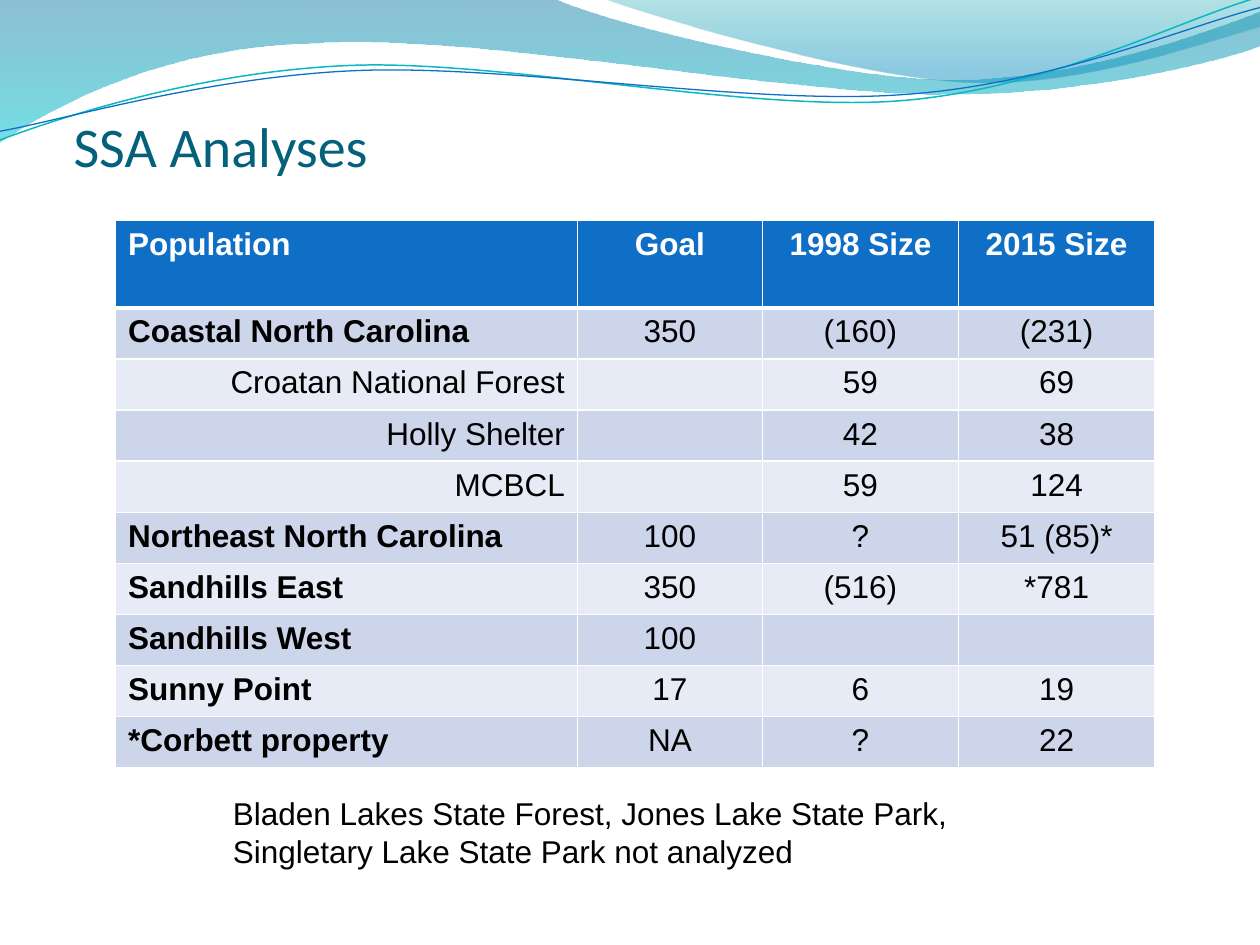
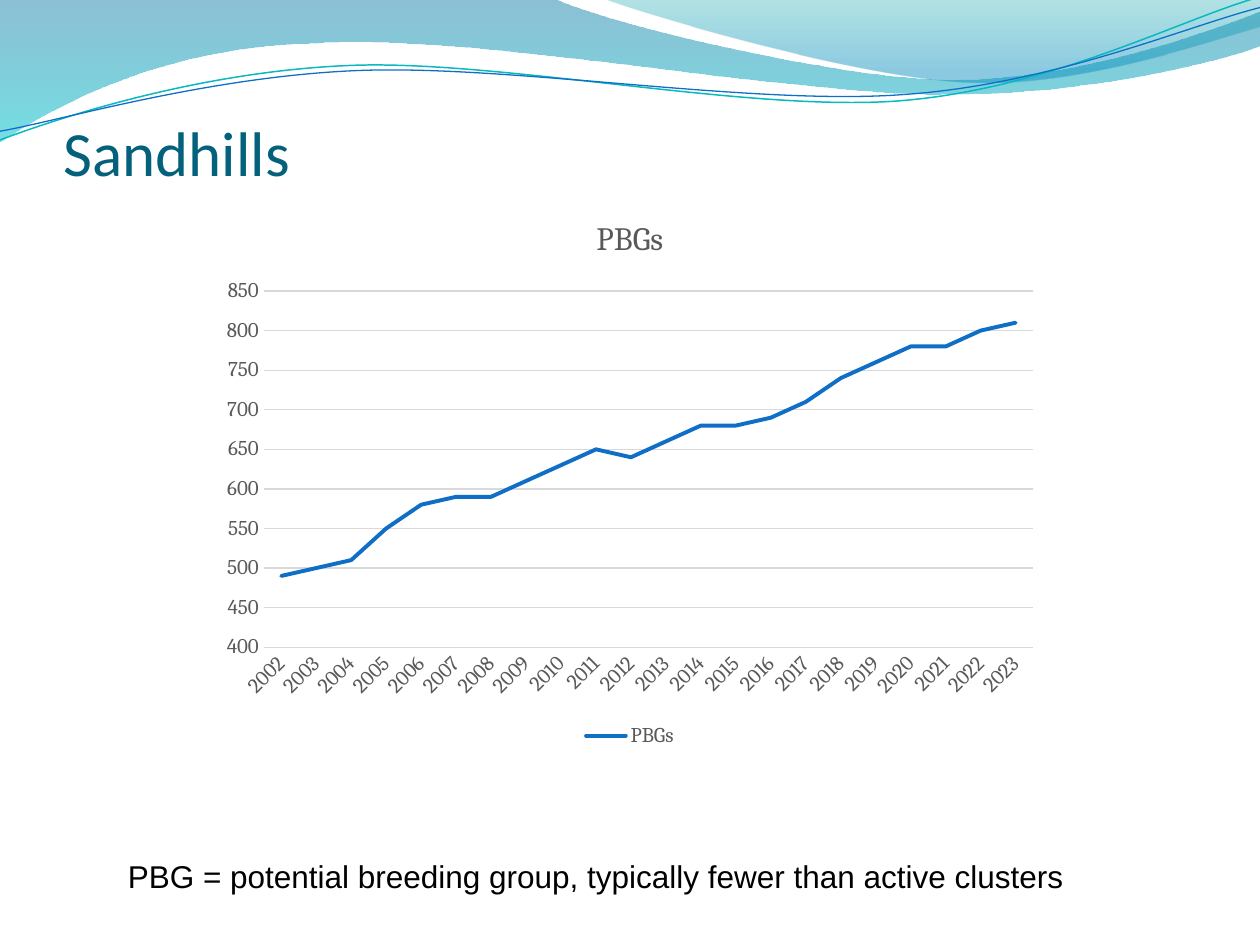
from dataclasses import dataclass
from typing import Optional

from lxml.etree import SubElement
from pptx import Presentation
from pptx.chart.data import CategoryChartData
from pptx.dml.color import RGBColor
from pptx.enum.chart import XL_CHART_TYPE as ChartType
from pptx.enum.chart import XL_LEGEND_POSITION as LegendPosition
from pptx.enum.chart import XL_TICK_MARK as TickMark
from pptx.enum.text import MSO_ANCHOR as Anchor
from pptx.enum.text import MSO_AUTO_SIZE as AutoSize
from pptx.enum.text import PP_ALIGN as Align
from pptx.oxml.ns import qn
from pptx.slide import Slide
from pptx.table import _Cell as Cell
from pptx.util import Pt

WHITE = RGBColor(0xFF, 0xFF, 0xFF)
BLACK = RGBColor(0x00, 0x00, 0x00)
BLUE = RGBColor(0x0F, 0x6F, 0xC6)
TEAL = RGBColor(0x0A, 0xB8, 0xBF)
TITLE_BLUE = RGBColor(0x04, 0x61, 0x7B)
DARK_ROW = RGBColor(0xCC, 0xD5, 0xEA)
LIGHT_ROW = RGBColor(0xE7, 0xEB, 0xF5)
CHART_TEXT = RGBColor(0x59, 0x59, 0x59)
GRID = RGBColor(0xD9, 0xD9, 0xD9)

TITLE_FONT, BODY_FONT, CHART_FONT = "Calibri", "Arial", "Cambria"
STRAND_TILT = 357.3

Point = tuple[float, float]


@dataclass(frozen=True)
class GradientStop:
    position: float
    color: RGBColor
    opacity: int


@dataclass(frozen=True)
class Wave:
    """A swoosh: segments of 1 point are straight, of 3 are Bézier curves."""
    start: Point
    segments: tuple[tuple[Point, ...], ...]
    stops: tuple[GradientStop, ...] = ()
    line_color: Optional[RGBColor] = None
    line_width: float = 0


@dataclass(frozen=True)
class Box:
    left: float
    top: float
    width: float
    height: float

    def lengths(self) -> tuple[Pt, Pt, Pt, Pt]:
        return Pt(self.left), Pt(self.top), Pt(self.width), Pt(self.height)


@dataclass(frozen=True)
class Population:
    name: str
    goal: str
    size_1998: str
    size_2015: str
    is_site: bool = False


WAVES = (
    Wave((0, 0),
         (((316.8, -0.7),),
          ((342.7, 12.2), (478.1, 45.4), (545.8, 45.4)),
          ((614.2, 45.4), (689.8, 18.7), (720, 6.5)),
          ((720.7, 25.9),),
          ((707.8, 31.7), (626.4, 54.7), (537.1, 54)),
          ((447.8, 54), (275, 20.2), (185, 24.5)),
          ((92.9, 25.9), (33.1, 59.8), (-0.7, 81.4)),
          ((0, 0),)),
         stops=(GradientStop(0, RGBColor(0x00, 0x74, 0xA1), 45),
                GradientStop(1, RGBColor(0x00, 0xC6, 0xCF), 55))),
    Wave((344.9, -0.7),
         (((366.5, 7.9), (491, 44.6), (553.7, 46.8)),
          ((616.3, 49.7), (691.9, 23), (720, 15.1)),
          ((720, 0),),
          ((344.9, -0.7),)),
         stops=(GradientStop(0, RGBColor(0x00, 0xA1, 0xA9), 30),
                GradientStop(0.8, RGBColor(0x00, 0x8B, 0xBF), 45))),
    Wave((-1.4, 63),
         (((33.8, 51.7), (114.1, 29.4), (199.8, 29.9)),
          ((284.9, 30.3), (425.8, 67.3), (512.4, 64.9)),
          ((599, 62.4), (676.4, 25.7), (720.2, 15.6))),
         line_color=TEAL, line_width=0.85),
    Wave((-1.1, 58),
         (((32.9, 53.8), (118.3, 32.5), (204.1, 33)),
          ((290.6, 33.4), (428.9, 63.8), (515.5, 61.4)),
          ((601.3, 59.6), (678.4, 30.1), (721.4, 21.3))),
         line_color=BLUE, line_width=0.75),
)

HEADINGS = ("Population", "Goal", "1998 Size", "2015 Size")
COLUMN_WIDTHS = (264, 105.7, 112.1, 112.1)
HEADER_HEIGHT, ROW_HEIGHT = 50, 29.2
POPULATIONS = (
    Population("Coastal North Carolina", "350", "(160)", "(231)"),
    Population("Croatan National Forest", "", "59", "69", is_site=True),
    Population("Holly Shelter", "", "42", "38", is_site=True),
    Population("MCBCL", "", "59", "124", is_site=True),
    Population("Northeast North Carolina", "100", "?", "51 (85)*"),
    Population("Sandhills East", "350", "(516)", "*781"),
    Population("Sandhills West", "100", "", ""),
    Population("Sunny Point", "17", "6", "19"),
    Population("*Corbett property", "NA", "?", "22"),
)

FIRST_YEAR = 2002
BREEDING_GROUPS = (490, 500, 510, 550, 580, 590, 590, 610, 630, 650, 640,
                   660, 680, 680, 690, 710, 740, 760, 780, 780, 800, 810)


def bend_segments(swoosh, wave: Wave) -> None:
    """Turn each run of three straight steps that stands for a curve into a Bézier."""
    steps = iter(swoosh.element.findall(f".//{qn('a:lnTo')}"))
    for segment in wave.segments:
        first, *others = [next(steps) for _ in segment]
        if others:
            first.tag = qn("a:cubicBezTo")
            for step in others:
                first.append(step[0])
                step.getparent().remove(step)


def draw_wave(slide: Slide, wave: Wave) -> None:
    points = [wave.start, *(point for segment in wave.segments for point in segment)]
    outline = [(Pt(x), Pt(y)) for x, y in points]
    builder = slide.shapes.build_freeform(*outline[0])
    builder.add_line_segments(outline[1:], close=bool(wave.stops))
    swoosh = builder.convert_to_shape()
    bend_segments(swoosh, wave)
    swoosh.shadow.inherit = False
    if not wave.stops:
        swoosh.rotation = STRAND_TILT
        swoosh.fill.background()
        swoosh.line.color.rgb = wave.line_color
        swoosh.line.width = Pt(wave.line_width)
        return
    swoosh.line.fill.background()
    swoosh.fill.gradient()
    swoosh.fill.gradient_angle = 270
    for target, stop in zip(swoosh.fill.gradient_stops, wave.stops):
        target.position = stop.position
        target.color.rgb = stop.color
    for color, stop in zip(swoosh.element.iter(qn("a:srgbClr")), wave.stops):
        SubElement(color, qn("a:alpha")).set("val", str(stop.opacity * 1000))


def style_font(font, name: str, size: float, color: RGBColor, bold: bool = False) -> None:
    font.name, font.size, font.bold = name, Pt(size), bold
    font.color.rgb = color


def add_title(slide: Slide, text: str, box: Box, size: float) -> None:
    frame = slide.shapes.add_textbox(*box.lengths()).text_frame
    frame.word_wrap = True
    frame.vertical_anchor = Anchor.BOTTOM
    frame.margin_left = frame.margin_right = frame.margin_bottom = 0
    frame.text = text
    style_font(frame.paragraphs[0].font, TITLE_FONT, size, TITLE_BLUE)


def add_note(slide: Slide, text: str, box: Box, wrap: bool = True) -> None:
    frame = slide.shapes.add_textbox(*box.lengths()).text_frame
    frame.word_wrap = wrap
    frame.auto_size = AutoSize.SHAPE_TO_FIT_TEXT
    frame.text = text
    for paragraph in frame.paragraphs:
        style_font(paragraph.font, BODY_FONT, 18, BLACK)


def set_borders(cell: Cell, top: float = 1, bottom: float = 1) -> None:
    """Add white borders; must run before the cell is filled."""
    properties = cell._tc.get_or_add_tcPr()
    for side, width in (("L", 1), ("R", 1), ("T", top), ("B", bottom)):
        border = SubElement(properties, qn(f"a:ln{side}"), w=str(Pt(width)))
        fill = SubElement(border, qn("a:solidFill"))
        SubElement(fill, qn("a:srgbClr"), val=str(WHITE))


def fill_cell(cell: Cell, text: str, fill: RGBColor, color: RGBColor,
              align: Align, bold: bool) -> None:
    cell.fill.solid()
    cell.fill.fore_color.rgb = fill
    cell.text = text
    paragraph = cell.text_frame.paragraphs[0]
    paragraph.alignment = align
    style_font(paragraph.font, BODY_FONT, 18, color, bold)


def add_population_table(slide: Slide, box: Box) -> None:
    table = slide.shapes.add_table(len(POPULATIONS) + 1, len(HEADINGS),
                                   *box.lengths()).table
    table.first_row = table.horz_banding = False
    for column, width in zip(table.columns, COLUMN_WIDTHS):
        column.width = Pt(width)
    for number, row in enumerate(table.rows):
        row.height = Pt(ROW_HEIGHT if number else HEADER_HEIGHT)

    for column, heading in enumerate(HEADINGS):
        cell = table.cell(0, column)
        set_borders(cell, bottom=3)
        fill_cell(cell, heading, BLUE, WHITE, Align.CENTER if column else Align.LEFT, True)

    for row, population in enumerate(POPULATIONS, start=1):
        values = (population.name, population.goal,
                  population.size_1998, population.size_2015)
        name_align = Align.RIGHT if population.is_site else Align.LEFT
        for column, value in enumerate(values):
            cell = table.cell(row, column)
            set_borders(cell, top=3 if row == 1 else 1)
            fill_cell(cell, value, DARK_ROW if row % 2 else LIGHT_ROW, BLACK,
                      Align.CENTER if column else name_align,
                      column == 0 and not population.is_site)


def add_breeding_group_chart(slide: Slide, box: Box) -> None:
    data = CategoryChartData()
    data.categories = [str(FIRST_YEAR + i) for i in range(len(BREEDING_GROUPS))]
    data.add_series("PBGs", BREEDING_GROUPS)
    chart = slide.shapes.add_chart(ChartType.LINE, *box.lengths(), data).chart
    style_font(chart.font, CHART_FONT, 10, BLACK)

    chart.has_title = True
    chart.chart_title.text_frame.text = "PBGs"
    style_font(chart.chart_title.text_frame.paragraphs[0].font, CHART_FONT, 18.6, CHART_TEXT)
    chart.has_legend = True
    chart.legend.position = LegendPosition.BOTTOM
    chart.legend.include_in_layout = False
    style_font(chart.legend.font, CHART_FONT, 12, CHART_TEXT)

    years, groups = chart.category_axis, chart.value_axis
    for axis in (years, groups):
        axis.major_tick_mark = axis.minor_tick_mark = TickMark.NONE
        style_font(axis.tick_labels.font, CHART_FONT, 12, CHART_TEXT)
    label_body = f".//{qn('c:catAx')}/{qn('c:txPr')}/{qn('a:bodyPr')}"
    chart.element.find(label_body).set("rot", "-2700000")
    groups.minimum_scale, groups.maximum_scale, groups.major_unit = 400, 850, 50
    groups.format.line.fill.background()
    for line in (years.format.line, groups.major_gridlines.format.line):
        line.color.rgb = GRID
        line.width = Pt(0.75)

    plot = chart.plots[0]
    plot.vary_by_categories = False
    trend = plot.series[0]
    trend.smooth = False
    trend.format.line.color.rgb = BLUE
    trend.format.line.width = Pt(2.25)
    chart.element.find(f".//{qn('c:ser')}//{qn('a:ln')}").set("cap", "rnd")


def add_wave_slide(deck) -> Slide:
    slide = deck.slides.add_slide(deck.slide_layouts[6])
    for wave in WAVES:
        draw_wave(slide, wave)
    return slide


def main() -> None:
    deck = Presentation()
    deck.slide_width, deck.slide_height = Pt(720), Pt(540)

    analyses = add_wave_slide(deck)
    add_title(analyses, "SSA Analyses", Box(42, 48, 666, 54), 32)
    add_population_table(analyses, Box(66, 126, 593.9, 312.8))
    add_note(analyses, "Bladen Lakes State Forest, Jones Lake State Park,\n"
             "Singletary Lake State Park not analyzed", Box(126, 450, 432, 51))

    sandhills = add_wave_slide(deck)
    add_title(sandhills, "Sandhills", Box(36.3, 55.5, 654, 52.5), 36)
    add_breeding_group_chart(sandhills, Box(120, 110, 480, 320))
    add_note(sandhills, "PBG = potential breeding group, typically fewer than active clusters",
             Box(66, 486, 554.5, 29), wrap=False)

    deck.save("out.pptx")


if __name__ == "__main__":
    main()
